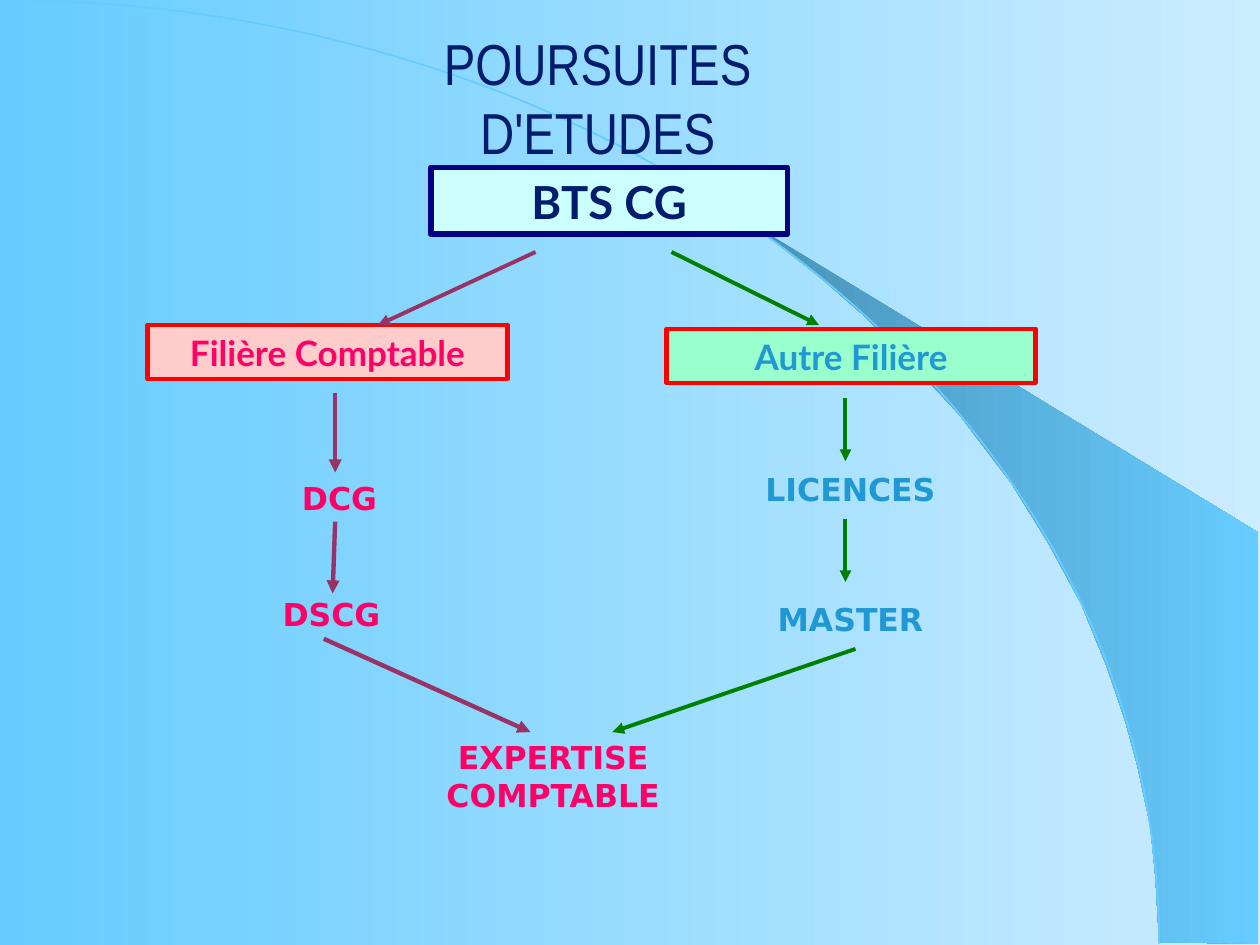
import dataclasses

import pptx
import pptx.dml.color
import pptx.enum.shapes
import pptx.enum.text
import pptx.oxml
import pptx.oxml.ns
import pptx.util

Inches, Pt = pptx.util.Inches, pptx.util.Pt
NAVY, PINK, BLUE, RED = "001C6E", "FF0066", "1F98D3", "FF0000"
PLUM, GREEN, SKY = "993366", "008000", "66CCFF"


@dataclasses.dataclass
class Label:
    text: str
    at: tuple[float, float, float, float]
    color: str
    size: float = 18
    font: str = "DejaVu Sans"
    bold: bool = True
    wrap: bool = True


@dataclasses.dataclass
class Box(Label):
    fill: str = "FFFFFF"
    line: str = RED
    weight: float = 2.5


@dataclasses.dataclass
class Arrow:
    start: tuple[float, float]
    end: tuple[float, float]
    color: str
    weight: float = 2.25


LABELS = [
    Label("POURSUITES\nD'ETUDES", (2.08, 0.17, 5.33, 0.92), NAVY, 33, "Arial Narrow", False, False),
    Label("DCG", (2.11, 3.75, 1.17, 0.4), PINK),
    Label("DSCG", (1.92, 4.67, 1.42, 0.4), PINK),
    Label("EXPERTISE COMPTABLE", (3.14, 5.81, 2.5, 0.7), PINK),
    Label("LICENCES", (5.71, 3.68, 2.08, 0.4), BLUE),
    Label("MASTER", (5.71, 4.71, 2.08, 0.4), BLUE),
]
BOXES = [
    Box("BTS CG", (3.42, 1.33, 2.83, 0.53), NAVY, 26, "Lato", fill="CCFFFF", line="000080", weight=3.25),
    Box("Filière Comptable", (1.17, 2.58, 2.86, 0.43), PINK, 20, "Lato", fill="FFCCCC"),
    Box("Autre Filière", (5.29, 2.61, 2.93, 0.43), BLUE, 20, "Lato", fill="99FFCC"),
]
ARROWS = [
    Arrow((4.25, 2), (3, 2.58), PLUM),
    Arrow((5.33, 2), (6.5, 2.58), GREEN),
    Arrow((2.66, 3.12), (2.66, 3.75), PLUM, 2.5),
    Arrow((2.66, 4.14), (2.64, 4.71), PLUM, 2.5),
    Arrow((2.57, 5.07), (4.21, 5.81), PLUM, 2.5),
    Arrow((6.71, 3.16), (6.71, 3.66), GREEN),
    Arrow((6.71, 4.12), (6.71, 4.62), GREEN),
    Arrow((6.79, 5.15), (4.86, 5.81), GREEN),
]
SWOOSH = [
    (9.2, 7.48), (9.99, 7.49), (9.99, 4.23), (5.89, 1.73), (6.24, 1.99), (6.53, 2.22),
    (6.85, 2.5), (7.16, 2.8), (7.62, 3.3), (8.03, 3.84), (8.32, 4.31), (8.58, 4.79),
    (8.78, 5.28), (8.93, 5.72), (9.03, 6.09), (9.13, 6.56), (9.17, 6.96),
]
ARC = [(0, 0), (5.08, 0), (9.2, 3.35), (9.2, 7.49)]


def rgb(color: str) -> pptx.dml.color.RGBColor:
    return pptx.dml.color.RGBColor.from_string(color)


def set_gradient(fill, first: str, last: str) -> None:
    fill.gradient()
    fill.gradient_angle = 0
    for stop, color, position in zip(fill.gradient_stops, (first, last), (0, 1)):
        stop.color.rgb = rgb(color)
        stop.position = position


def bezier(points: list[tuple[float, float]], steps: int = 60) -> list[tuple[float, float]]:
    curve = []
    for i in range(steps + 1):
        t = i / steps
        weights = ((1 - t) ** 3, 3 * t * (1 - t) ** 2, 3 * t * t * (1 - t), t ** 3)
        curve.append(tuple(sum(w * p[axis] for w, p in zip(weights, points)) for axis in (0, 1)))
    return curve


def add_outline(s, points: list[tuple[float, float]], close: bool):
    start, *rest = [(Inches(x), Inches(y)) for x, y in points]
    builder = s.shapes.build_freeform(*start)
    builder.add_line_segments(rest, close=close)
    sp = builder.convert_to_shape()
    sp.shadow.inherit = False
    return sp


def write_text(sp, label: Label) -> None:
    tf = sp.text_frame
    tf.word_wrap = label.wrap
    tf.vertical_anchor = pptx.enum.text.MSO_ANCHOR.TOP
    tf.margin_left = tf.margin_right = Inches(0.09)
    tf.margin_top = tf.margin_bottom = Inches(0.05)
    tf.text = label.text
    for p in tf.paragraphs:
        p.alignment = pptx.enum.text.PP_ALIGN.CENTER
        p.font.name, p.font.size, p.font.bold = label.font, Pt(label.size), label.bold
        p.font.color.rgb = rgb(label.color)


def add_label(s, label: Label) -> None:
    write_text(s.shapes.add_textbox(*map(Inches, label.at)), label)


def add_box(s, box: Box) -> None:
    sp = s.shapes.add_shape(pptx.enum.shapes.MSO_SHAPE.RECTANGLE, *map(Inches, box.at))
    sp.shadow.inherit = False
    sp.fill.solid()
    sp.fill.fore_color.rgb = rgb(box.fill)
    sp.line.color.rgb = rgb(box.line)
    sp.line.width = Pt(box.weight)
    write_text(sp, box)


def add_arrow(s, arrow: Arrow) -> None:
    sp = s.shapes.add_connector(
        pptx.enum.shapes.MSO_CONNECTOR.STRAIGHT, *map(Inches, arrow.start + arrow.end))
    sp.line.color.rgb = rgb(arrow.color)
    sp.line.width = Pt(arrow.weight)
    tail = pptx.oxml.parse_xml(f'<a:tailEnd {pptx.oxml.ns.nsdecls("a")} type="triangle"/>')
    sp.line._get_or_add_ln().append(tail)
    sp._element.spPr.append(pptx.oxml.parse_xml(f'<a:effectLst {pptx.oxml.ns.nsdecls("a")}/>'))


def main() -> None:
    """Build the slide on further study after the BTS CG."""
    prs = pptx.Presentation()
    prs.slide_width, prs.slide_height = Inches(10), Inches(7.5)
    s = prs.slides.add_slide(prs.slide_layouts[6])
    set_gradient(s.background.fill, SKY, "CCECFF")

    swoosh = add_outline(s, SWOOSH, close=True)
    set_gradient(swoosh.fill, "4992B6", SKY)
    swoosh.line.fill.background()
    arc = add_outline(s, bezier(ARC), close=False)
    arc.fill.background()
    arc.line.color.rgb = rgb(SKY)
    arc.line.width = Pt(1)

    for box in BOXES:
        add_box(s, box)
    for arrow in ARROWS:
        add_arrow(s, arrow)
    for label in LABELS:
        add_label(s, label)
    prs.save("out.pptx")


if __name__ == "__main__":
    main()
